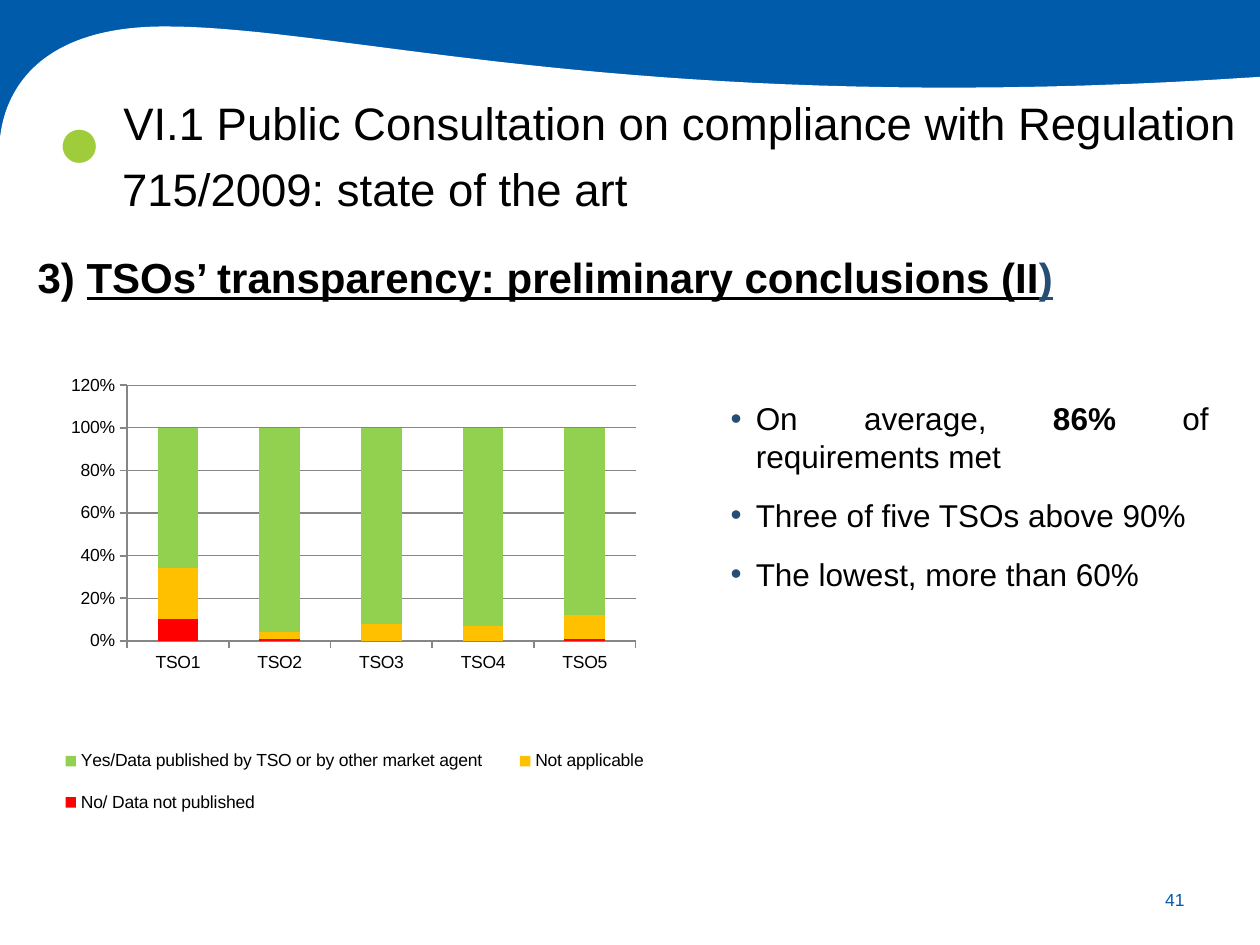
from dataclasses import dataclass

from lxml.etree import SubElement
from pptx import Presentation
from pptx.chart.data import CategoryChartData
from pptx.dml.color import RGBColor
from pptx.enum.chart import XL_CHART_TYPE as ChartType, XL_LEGEND_POSITION as LegendSpot, XL_TICK_MARK as Tick
from pptx.enum.shapes import MSO_SHAPE as Preset
from pptx.enum.text import MSO_ANCHOR as Anchor, PP_ALIGN as Align
from pptx.oxml import parse_xml
from pptx.oxml.ns import nsdecls, qn
from pptx.util import Inches, Pt


@dataclass(frozen=True)
class Theme:
    """Hold the colours, font and type sizes of the slide."""
    font: str = "Arial"
    ink: str = "000000"
    paper: str = "FFFFFF"
    brand: str = "005BAB"
    accent: str = "9ECC3B"
    navy: str = "264D74"
    grid: str = "868686"
    no: str = "FF0000"
    neutral: str = "FFC000"
    yes: str = "92D050"
    title: int = 26
    heading: int = 24
    body: int = 18
    small: int = 10
    dot: int = 44


THEME = Theme()
WIDTH, HEIGHT = 10, 7.5
TSOS = ["TSO1", "TSO2", "TSO3", "TSO4", "TSO5"]
ANSWERS = [
    ("No/ Data not published", THEME.no, [0.1, 0.01, 0, 0, 0.01]),
    ("Not applicable", THEME.neutral, [0.24, 0.03, 0.08, 0.07, 0.11]),
    ("Yes/Data published by TSO or by other market agent", THEME.yes, [0.66, 0.96, 0.92, 0.93, 0.88]),
]
CONCLUSIONS = [
    [("On average, ", {}), ("86% ", {"bold": True}), ("of requirements met", {})],
    [("Three of five TSOs above 90%", {})],
    [("The lowest, more than 60%", {})],
]


def rgb(code):
    """Turn a hex code into a colour."""
    return RGBColor.from_string(code)


def paint(shape, color):
    """Give a shape a flat fill without line or shadow."""
    shape.shadow.inherit = False
    shape.fill.solid()
    shape.fill.fore_color.rgb = rgb(color)
    shape.line.fill.background()


def bezier(start, first, second, end, steps=40):
    """Return points along a cubic curve, without its start."""
    points = []
    for step in range(1, steps + 1):
        t = step / steps
        weights = ((1 - t) ** 3, 3 * t * (1 - t) ** 2, 3 * t * t * (1 - t), t ** 3)
        points.append(tuple(sum(w * p[axis] for w, p in zip(weights, (start, first, second, end)))
                            for axis in (0, 1)))
    return points


def add_wave(slide):
    """Draw the blue header band and the white sheet that curves over it."""
    band = slide.shapes.add_shape(Preset.RECTANGLE, 0, 0, Inches(WIDTH), Inches(1.15))
    paint(band, THEME.brand)
    edge, crest, foot = (WIDTH, 0.61), (1.31, 0.21), (0, 1.1)
    outline = ([edge] + bezier(edge, (5.1, 0.94), (2.76, 0.21), crest)
               + bezier(crest, (0.23, 0.21), (0.03, 0.8), foot)
               + [(0, HEIGHT), (WIDTH, HEIGHT)])
    start, *rest = [(Inches(x), Inches(y)) for x, y in outline]
    builder = slide.shapes.build_freeform(*start)
    builder.add_line_segments(rest, close=True)
    paint(builder.convert_to_shape(), THEME.paper)


def add_bullet(paragraph, color):
    """Put a coloured bullet on a paragraph."""
    props = paragraph._p.get_or_add_pPr()
    SubElement(SubElement(props, qn("a:buClr")), qn("a:srgbClr")).set("val", color)
    SubElement(props, qn("a:buFont")).set("typeface", THEME.font)
    SubElement(props, qn("a:buChar")).set("char", "•")


def add_text(slide, box, paragraphs, *, size, color=THEME.ink, align=Align.LEFT, anchor=Anchor.TOP,
             left=0.0, hang=0.0, line=None, gap=0, bullet=None, inset=0.1, wrap=True):
    """Place paragraphs of (text, format) runs in a text box."""
    frame = slide.shapes.add_textbox(*map(Inches, box)).text_frame
    frame.word_wrap = wrap
    frame.vertical_anchor = anchor
    frame.margin_left = frame.margin_right = Inches(inset)
    for index, runs in enumerate(paragraphs):
        paragraph = frame.add_paragraph() if index else frame.paragraphs[0]
        props = paragraph._p.get_or_add_pPr()
        props.set("marL", str(Inches(left)))
        props.set("indent", str(Inches(hang)))
        paragraph.alignment = align
        if line:
            paragraph.line_spacing = line
        paragraph.space_before = Pt(gap if index else 0)
        paragraph.space_after = Pt(gap)
        if bullet:
            add_bullet(paragraph, bullet)
        for text, style in runs:
            run = paragraph.add_run()
            run.text = text
            run.font.name = THEME.font
            run.font.size = Pt(size)
            run.font.bold = style.get("bold", False)
            run.font.underline = style.get("underline", False)
            run.font.color.rgb = rgb(style.get("color", color))


def set_layout(element, before, x, y, w, h, inner=False):
    """Fix the place of a chart part as shares of the chart."""
    for old in element.findall(qn("c:layout")):
        element.remove(old)
    target = '<c:layoutTarget val="inner"/>' if inner else ""
    sizes = "".join(f'<c:{key} val="{value}"/>' for key, value in zip("xywh", (x, y, w, h)))
    layout = parse_xml(f'<c:layout {nsdecls("c")}><c:manualLayout>{target}<c:xMode val="edge"/>'
                       f'<c:yMode val="edge"/>{sizes}</c:manualLayout></c:layout>')
    element.find(qn(before)).addprevious(layout)


def style_axis(axis):
    """Give an axis its grey line and ticks."""
    axis.format.line.color.rgb = rgb(THEME.grid)
    axis.format.line.width = Pt(1)
    axis.major_tick_mark = Tick.OUTSIDE
    axis.minor_tick_mark = Tick.NONE


def add_answer_chart(slide, box):
    """Draw the stacked shares of answers for each TSO."""
    data = CategoryChartData(number_format="0%")
    data.categories = TSOS
    for name, _, shares in ANSWERS:
        data.add_series(name, shares)
    chart = slide.shapes.add_chart(ChartType.COLUMN_STACKED, *map(Inches, box), data).chart
    chart.has_title = False
    chart.font.name = THEME.font
    chart.font.size = Pt(THEME.small)
    chart.font.color.rgb = rgb(THEME.ink)
    plot = chart.plots[0]
    plot.gap_width, plot.overlap, plot.vary_by_categories = 150, 100, False
    for series, (_, color, _) in zip(plot.series, ANSWERS):
        series.format.fill.solid()
        series.format.fill.fore_color.rgb = rgb(color)
    shares_axis = chart.value_axis
    shares_axis.minimum_scale, shares_axis.maximum_scale, shares_axis.major_unit = 0, 1.2, 0.2
    shares_axis.tick_labels.number_format = "0%"
    shares_axis.tick_labels.number_format_is_linked = False
    shares_axis.major_gridlines.format.line.color.rgb = rgb(THEME.grid)
    for axis in (shares_axis, chart.category_axis):
        style_axis(axis)
    chart.has_legend = True
    chart.legend.position = LegendSpot.RIGHT
    chart.legend.include_in_layout = False
    set_layout(chart.legend._element, "c:overlay", 0.02, 0.72, 0.96, 0.2)
    set_layout(plot._element.getparent(), "c:barChart", 0.16, 0.06, 0.76, 0.49, inner=True)


def main():
    """Build and save the slide."""
    deck = Presentation()
    deck.slide_width, deck.slide_height = Inches(WIDTH), Inches(HEIGHT)
    slide = deck.slides.add_slide(deck.slide_layouts[6])
    add_wave(slide)
    add_text(slide, (8.94, 6.94, 0.56, 0.4), [[("41", {})]], size=THEME.small, color=THEME.brand,
             align=Align.RIGHT, anchor=Anchor.MIDDLE)
    add_text(slide, (0.36, 0.57, 0.55, 0.94), [[("●", {})]], size=THEME.dot, color=THEME.accent,
             align=Align.CENTER, anchor=Anchor.BOTTOM, inset=0, wrap=False)
    heading = [("3) ", {"bold": True}),
               ("TSOs’ transparency: preliminary conclusions (II", {"bold": True, "underline": True}),
               (")", {"bold": True, "underline": True, "color": THEME.navy})]
    add_text(slide, (0, 1.95, 9.69, 0.6), [heading], size=THEME.heading, align=Align.JUSTIFY,
             left=0.39, hang=-0.19)
    add_answer_chart(slide, (0.16, 2.81, 5.31, 4.14))
    add_text(slide, (5.31, 3.12, 4.38, 2.12), CONCLUSIONS, size=THEME.body, align=Align.JUSTIFY,
             left=0.59, hang=-0.2, gap=6, bullet=THEME.navy)
    title = "VI.1 Public Consultation on compliance with Regulation 715/2009: state of the art"
    add_text(slide, (0.78, 0.62, 9.22, 1.14), [[(title, {})]], size=THEME.title, left=0.09, hang=0.01,
             line=1.2)
    deck.save("out.pptx")


if __name__ == "__main__":
    main()
